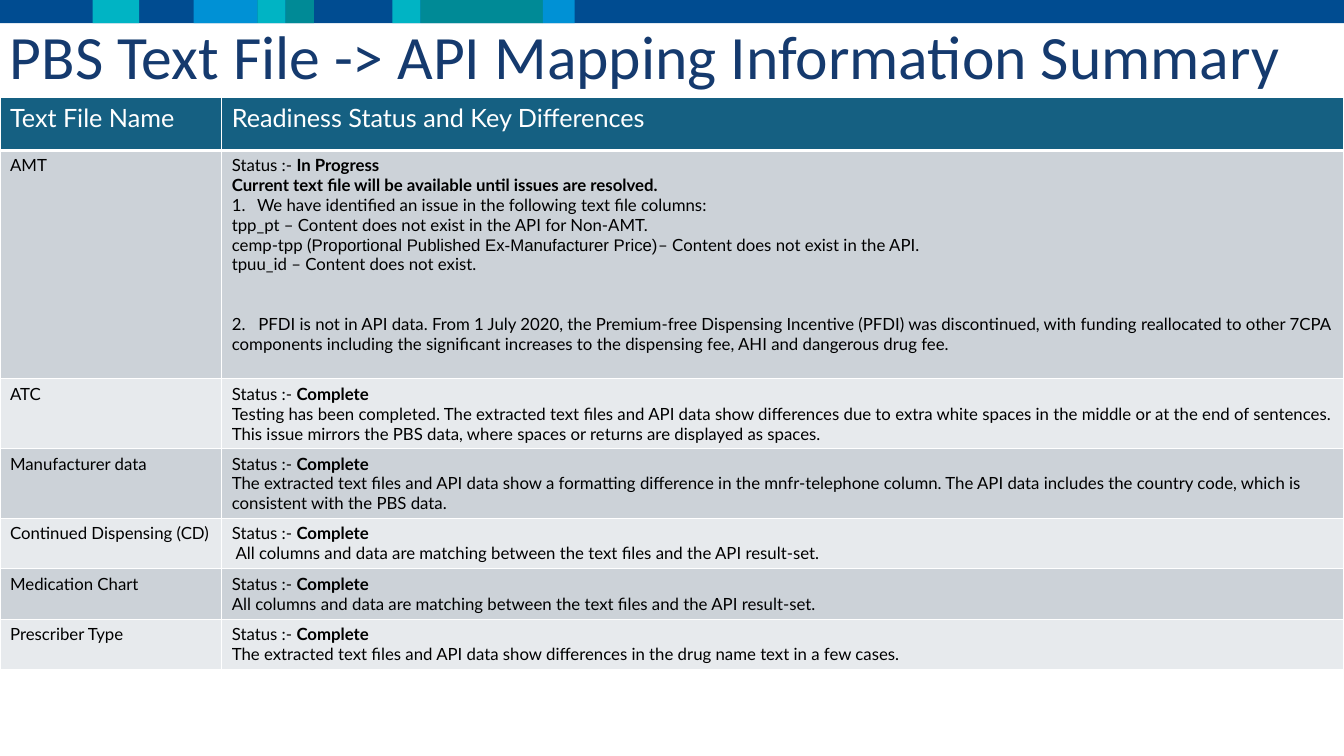
from dataclasses import dataclass
from lxml.etree import SubElement as Sub
from pptx import Presentation
from pptx.dml.color import RGBColor
from pptx.enum.shapes import MSO_SHAPE as Shape
from pptx.enum.text import MSO_ANCHOR as Anchor
from pptx.oxml.ns import qn
from pptx.util import Emu, Inches, Pt

WIDE, HIGH = Inches(13.33), Inches(7.5)
NAVY, AQUA, BLUE, TEAL = "004C91", "00B4C4", "0091D5", "008A96"
WHITE, BLACK, HEAD = "FFFFFF", "000000", "156082"
SHADES = ("CCD2D8", "E7EAED")
COLS = (16.5, 83.5)
TOP = 12.93
SAME = "All columns and data are matching between the text files and the API result-set."


@dataclass
class Band:
    left: float
    width: float
    fill: str


@dataclass
class Run:
    text: str
    bold: bool = False
    font: str = "Lato"


@dataclass
class Para:
    runs: list[Run]
    size: float = 12
    line: float = 14.2
    color: str = BLACK
    count: bool = False
    gap: float = 0


@dataclass
class Row:
    height: float
    name: Para
    notes: list[Para]


def across(share: float) -> Emu:
    return Emu(round(WIDE * share / 100))


def down(share: float) -> Emu:
    return Emu(round(HIGH * share / 100))


def paint(text: str) -> RGBColor:
    return RGBColor.from_string(text)


def plain(text: str) -> Para:
    return Para([Run(text)])


def state(word: str) -> Para:
    return Para([Run("Status :- "), Run(word, True)])


def title(text: str) -> Para:
    return Para([Run(text)], 18, 21.8, WHITE)


def done(height: float, name: str, note: str) -> Row:
    return Row(height, plain(name), [state("Complete"), plain(note)])


BANDS = [
    Band(0, 100, NAVY),
    Band(6.9, 3.45, AQUA),
    Band(14.4, 4.75, BLUE),
    Band(19.15, 2.1, AQUA),
    Band(21.25, 2.1, TEAL),
    Band(29.2, 2.1, AQUA),
    Band(31.3, 9.1, TEAL),
    Band(40.4, 2.35, BLUE),
]

ROWS = [
    Row(6.93, title("Text File Name"), [title("Readiness Status and Key Differences")]),
    Row(30.27, plain("AMT"), [
        state("In Progress"),
        Para([Run("Current text file will be available until issues are resolved.", True)]),
        Para([Run("We have identified an issue in the following text file columns:")], count=True),
        plain("tpp_pt – Content does not exist in the API for Non-AMT."),
        Para([
            Run("cemp-tpp ("),
            Run("Proportional Published Ex-Manufacturer Price)", font="Arial"),
            Run("– Content does not exist in the API."),
        ]),
        plain("tpuu_id – Content does not exist."),
        Para([Run(
            "2.   PFDI is not in API data. From 1 July 2020, the Premium-free Dispensing "
            "Incentive (PFDI) was discontinued, with funding reallocated to other 7CPA "
            "components including the significant increases to the dispensing fee, AHI "
            "and dangerous drug fee.")], gap=28.4),
    ]),
    done(9.2, "ATC",
         "Testing has been completed. The extracted text files and API data show "
         "differences due to extra white spaces in the middle or at the end of sentences. "
         "This issue mirrors the PBS data, where spaces or returns are displayed as spaces."),
    done(9.2, "Manufacturer data",
         "The extracted text files and API data show a formatting difference in the "
         "mnfr-telephone column. The API data includes the country code, which "
         "is consistent with the PBS data."),
    done(6.67, "Continued Dispensing (CD)", " " + SAME),
    done(6.67, "Medication Chart", SAME),
    done(6.67, "Prescriber Type",
         "The extracted text files and API data show differences in the drug name text in "
         "a few cases."),
]


def style(font, face: str, size: float, color: str, bold: bool = False) -> None:
    font.name, font.size, font.bold = face, Pt(size), bold
    font.color.rgb = paint(color)


def write(frame, paras: list[Para]) -> None:
    for i, para in enumerate(paras):
        block = frame.add_paragraph() if i else frame.paragraphs[0]
        if para.count:
            props = block._p.get_or_add_pPr()
            props.set("marL", str(Inches(0.25)))
            props.set("indent", str(-Inches(0.25)))
            Sub(props, qn("a:buFont"), typeface="+mj-lt")
            Sub(props, qn("a:buAutoNum"), type="arabicPeriod")
        block.line_spacing = Pt(para.line)
        if para.gap:
            block.space_before = Pt(para.gap)
        for part in para.runs:
            run = block.add_run()
            run.text = part.text
            style(run.font, part.font, para.size, para.color, part.bold)


def edge(cell, side: str, width: float) -> None:
    line = Sub(cell._tc.get_or_add_tcPr(), qn(f"a:ln{side}"), w=str(Pt(width)))
    Sub(Sub(line, qn("a:solidFill")), qn("a:srgbClr"), val=WHITE)


def draw_band(slide, band: Band) -> None:
    box = slide.shapes.add_shape(
        Shape.RECTANGLE, across(band.left), 0, across(band.width), down(3.07))
    box.shadow.inherit = False
    box.fill.solid()
    box.fill.fore_color.rgb = paint(band.fill)
    box.line.fill.background()


def draw_table(slide) -> None:
    tall = sum(row.height for row in ROWS)
    grid = slide.shapes.add_table(
        len(ROWS), len(COLS), 0, down(TOP), WIDE, down(tall)).table
    grid.first_row = grid.horz_banding = False
    for col, share in zip(grid.columns, COLS):
        col.width = across(share)
    for i, row in enumerate(ROWS):
        grid.rows[i].height = down(row.height)
        for j, paras in enumerate(([row.name], row.notes)):
            cell = grid.cell(i, j)
            write(cell.text_frame, paras)
            for side in "LRTB":
                thick = (i, side) in ((0, "B"), (1, "T"))
                edge(cell, side, 2.48 if thick else 0.83)
            cell.fill.solid()
            cell.fill.fore_color.rgb = paint(SHADES[(i - 1) % 2] if i else HEAD)


def draw_title(slide) -> None:
    frame = slide.shapes.add_textbox(0, down(2.93), WIDE, down(9.87)).text_frame
    frame.word_wrap = True
    frame.vertical_anchor = Anchor.MIDDLE
    block = frame.paragraphs[0]
    block.line_spacing = 0.9
    run = block.add_run()
    run.text = "PBS Text File -> API Mapping Information Summary"
    style(run.font, "Calibri", 44, "153A6E")


def main() -> None:
    deck = Presentation()
    deck.slide_width, deck.slide_height = WIDE, HIGH
    slide = deck.slides.add_slide(deck.slide_layouts[6])
    for band in BANDS:
        draw_band(slide, band)
    draw_table(slide)
    draw_title(slide)
    deck.save("out.pptx")


if __name__ == "__main__":
    main()
